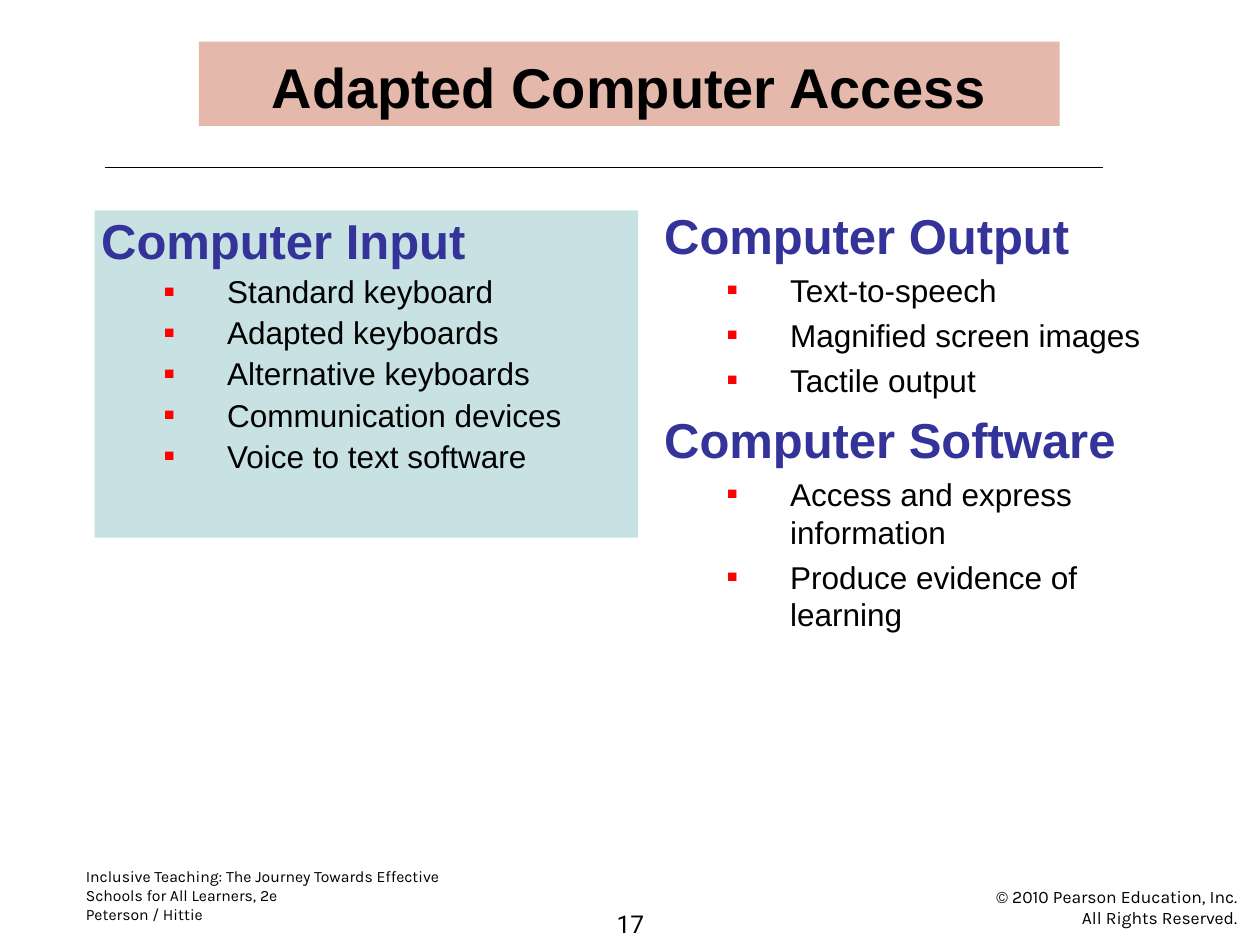
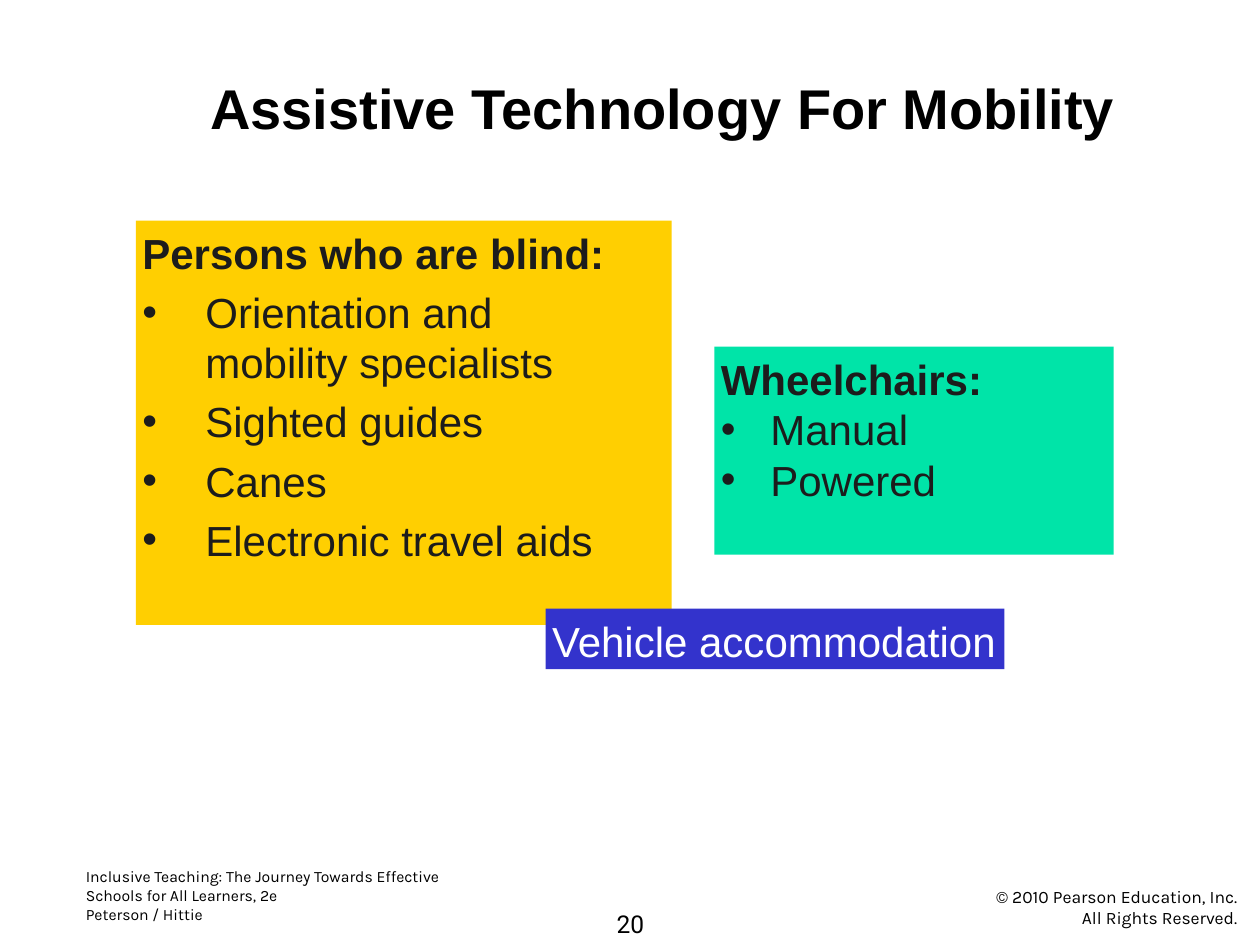
from lxml import etree
from pptx import Presentation, util as u
from pptx.dml.color import RGBColor
from pptx.enum import shapes, text
from pptx.oxml.ns import qn

TWO_CONTENT = 3
BODY_FONT, FOOTER_FONT, NUMBER_FONT = "Arial", "Karla", "Roboto"
BLACK, WHITE, CHARCOAL = "000000", "FFFFFF", "1C1C1C"
NAVY, RED, ROSE, ICE = "333399", "FF0000", "E4B9AC", "C8E2E4"
YELLOW, GREEN, BLUE = "FFCF01", "00E4A8", "3333CC"


def color(value):
    """Turn a hex string into a colour."""
    return RGBColor.from_string(value)


def style(size, hue=BLACK, bold=False, name=BODY_FONT, **layout):
    """Describe how a paragraph looks."""
    font = {"size": u.Pt(size), "bold": bold, "name": name}
    return {"font": font, "color": hue, **layout}


def square_list(line_spacing):
    """Give the heading and item styles of a list with red squares."""
    heading = style(28, NAVY, True, before=6, spacing=line_spacing)
    item = style(18, before=4, spacing=line_spacing, level=1, left=2.54,
                 hanging=1.27, bullet="■", bullet_color=RED, bullet_size=55)
    return heading, item


def dot_list(before, hanging):
    """Give the heading and item styles of a list with round bullets."""
    heading = style(24, CHARCOAL, True, before=before)
    item = style(24, CHARCOAL, before=before, left=hanging, hanging=hanging,
                 bullet="•", bullet_color=CHARCOAL, bullet_size=100)
    return heading, item


def lines_of(heading, items, styles):
    """Pair a heading and its items with their styles."""
    return [(heading, styles[0])] + [(item, styles[1]) for item in items]


class Deck:
    """Hold the shared style and the current slide."""

    def __init__(self):
        """Start an empty presentation."""
        self.presentation = Presentation()
        self.presentation.slide_width = u.Cm(25.4)
        self.presentation.slide_height = u.Cm(19.05)
        self.slide = None

    def new_slide(self, number):
        """Add a slide with its footers and number."""
        layout = self.presentation.slide_layouts[TWO_CONTENT]
        self.slide = self.presentation.slides.add_slide(layout)
        small = style(9, name=FOOTER_FONT)
        rights = style(10, name=FOOTER_FONT, align=text.PP_ALIGN.RIGHT)
        page = style(14, name=NUMBER_FONT, align=text.PP_ALIGN.CENTER)
        self.text_box((1.6, 17.35, 7.8, 1.42), [
            ("Inclusive Teaching: The Journey Towards Effective Schools for All Learners, 2e", small),
            ("Peterson / Hittie", small)])
        self.text_box((14.73, 17.73, 10.34, 1.09), [
            ("© 2010 Pearson Education, Inc.", rights),
            ("All Rights Reserved.", rights)])
        self.text_box((12.29, 18.19, 0.84, 0.86), [(str(number), page)],
                      anchor=text.MSO_ANCHOR.BOTTOM, wrap=False)

    def title(self, words, box, fill=None):
        """Place and format the slide title."""
        heading = style(32, bold=True, align=text.PP_ALIGN.CENTER)
        self.dress(self.slide.shapes.title, box, [(words, heading)], fill,
                   anchor=text.MSO_ANCHOR.BOTTOM)

    def body(self, index, box, lines, fill=None, **frame):
        """Place and fill one of the two content placeholders."""
        self.dress(self.slide.placeholders[index], box, lines, fill, **frame)

    def text_box(self, box, lines, fill=None, **frame):
        """Add a free text box."""
        shape = self.slide.shapes.add_textbox(*map(u.Cm, box))
        self.dress(shape, box, lines, fill, **frame)

    def rule(self, left, right, top):
        """Draw a thin horizontal line."""
        line = self.slide.shapes.add_connector(
            shapes.MSO_CONNECTOR.STRAIGHT, *map(u.Cm, (left, top, right, top)))
        line.line.color.rgb = color(BLACK)
        line.line.width = u.Pt(0.75)
        etree.SubElement(line._element.spPr, qn("a:effectLst"))

    def dress(self, shape, box, lines, fill, anchor=text.MSO_ANCHOR.TOP,
              wrap=True, right_inset=0.13):
        """Position a shape, fill it and set its paragraphs."""
        for name, length in zip(("left", "top", "width", "height"), box):
            setattr(shape, name, u.Cm(length))
        if fill:
            shape.fill.solid()
            shape.fill.fore_color.rgb = color(fill)
        frame = shape.text_frame
        inset = u.Cm(0.13)
        settings = {"auto_size": text.MSO_AUTO_SIZE.NONE, "word_wrap": wrap,
                    "vertical_anchor": anchor, "margin_left": inset,
                    "margin_top": inset, "margin_bottom": inset,
                    "margin_right": u.Cm(right_inset)}
        for name, value in settings.items():
            setattr(frame, name, value)
        for position, (words, look) in enumerate(lines):
            paragraph = frame.add_paragraph() if position else frame.paragraphs[0]
            self.format_paragraph(paragraph, words, look, first=position == 0)

    def format_paragraph(self, paragraph, words, look, first):
        """Fill one paragraph and format it."""
        settings = {"alignment": look.get("align", text.PP_ALIGN.LEFT),
                    "level": look.get("level", 0),
                    "line_spacing": look.get("spacing", 1.0),
                    "space_before": u.Pt(0 if first else look.get("before", 0)),
                    "space_after": u.Pt(0)}
        for name, value in settings.items():
            setattr(paragraph, name, value)
        self.bullet(paragraph, look)
        run = paragraph.add_run()
        run.text = words
        for name, value in look["font"].items():
            setattr(run.font, name, value)
        run.font.color.rgb = color(look["color"])

    def bullet(self, paragraph, look):
        """Set the indent and the bullet, or turn the bullet off."""
        properties = paragraph._p.get_or_add_pPr()
        properties.set("marL", str(u.Cm(look.get("left", 0))))
        properties.set("indent", str(-u.Cm(look.get("hanging", 0))))
        if "bullet" not in look:
            etree.SubElement(properties, qn("a:buNone"))
            return
        hue = etree.SubElement(properties, qn("a:buClr"))
        etree.SubElement(hue, qn("a:srgbClr"), val=look["bullet_color"])
        etree.SubElement(properties, qn("a:buSzPct"), val=str(look["bullet_size"] * 1000))
        etree.SubElement(properties, qn("a:buFont"), typeface=BODY_FONT)
        etree.SubElement(properties, qn("a:buChar"), char=look["bullet"])


def computer_access(deck):
    """Build the slide on adapted computer access."""
    deck.new_slide(17)
    deck.title("Adapted Computer Access", (4.01, 0.84, 17.35, 1.7), ROSE)
    deck.rule(2.11, 22.23, 3.38)
    deck.body(1, (1.91, 4.24, 10.95, 6.6), lines_of(
        "Computer Input",
        ["Standard keyboard", "Adapted keyboards", "Alternative keyboards",
         "Communication devices", "Voice to text software"],
        square_list(0.9)), ICE)
    loose = square_list(1.0)
    output = lines_of("Computer Output", [
        "Text-to-speech", "Magnified screen images", "Tactile output"], loose)
    software = lines_of("Computer Software", [
        "Access and express information", "Produce evidence of learning"], loose)
    deck.body(2, (13.26, 4.01, 10.59, 9.42), output + software)


def mobility(deck):
    """Build the slide on mobility."""
    deck.new_slide(20)
    deck.title("Assistive Technology For Mobility", (2.67, 1.45, 21.39, 1.52))
    deck.body(1, (2.74, 4.45, 10.8, 8.15), lines_of(
        "Persons who are blind:",
        ["Orientation and mobility specialists", "Sighted guides", "Canes",
         "Electronic travel aids"],
        dot_list(5, 1.27)), YELLOW, right_inset=0.89)
    deck.body(2, (14.4, 6.99, 8.05, 4.19), lines_of(
        "Wheelchairs:", ["Manual", "Powered"], dot_list(0, 1)), GREEN)
    deck.text_box((11, 12.27, 9.25, 1.22),
                  [("Vehicle accommodation", style(24, WHITE))], BLUE, wrap=False)


def main():
    """Build both slides and save them."""
    deck = Deck()
    computer_access(deck)
    mobility(deck)
    deck.presentation.save("out.pptx")


if __name__ == "__main__":
    main()
